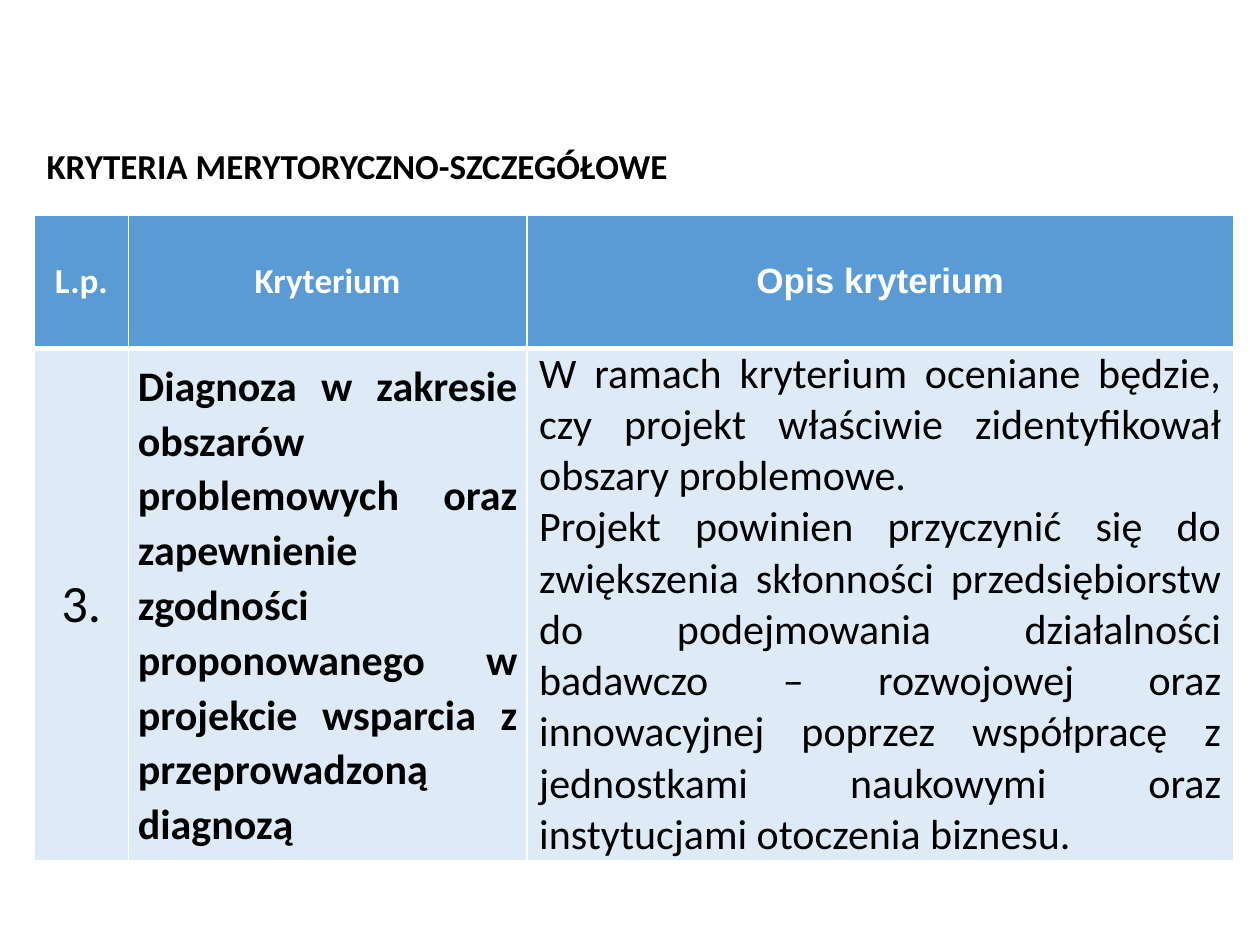
from dataclasses import dataclass

from lxml import etree
from pptx import Presentation
from pptx.dml.color import RGBColor
from pptx.enum.text import MSO_ANCHOR, MSO_AUTO_SIZE, PP_ALIGN
from pptx.oxml.ns import qn
from pptx.util import Cm, Pt

CENTER, JUSTIFY, LEFT = PP_ALIGN.CENTER, PP_ALIGN.JUSTIFY, PP_ALIGN.LEFT
TOP, MIDDLE = MSO_ANCHOR.TOP, MSO_ANCHOR.MIDDLE
WHITE, BLACK, HEADER_BLUE, BODY_BLUE = "FFFFFF", "000000", "5B9BD5", "DEEBF7"
COLUMN_WIDTHS = (1.9, 8.03, 14.25)
ROW_HEIGHTS = (2.69, 9.73)


@dataclass(frozen=True)
class CriterionCell:
    paragraphs: tuple[str, ...]
    size: int = 20
    font: str = "Calibri"
    color: str = BLACK
    bold: bool = False
    fill: str = BODY_BLUE
    align: PP_ALIGN = CENTER
    anchor: MSO_ANCHOR = MIDDLE
    side_margin: float = 0.25
    end_margin: float = 0.13
    line_spacing: float = 1.0
    bottom_border: int = 1


def header(label: str, font: str = "Calibri") -> CriterionCell:
    return CriterionCell((label,), font=font, color=WHITE, bold=True,
                         fill=HEADER_BLUE, bottom_border=3)


CRITERIA = (
    (header("L.p."), header("Kryterium"), header("Opis kryterium", "Arial")),
    (
        CriterionCell(("3.",), size=30),
        CriterionCell(
            ("Diagnoza w zakresie obszarów problemowych oraz zapewnienie zgodności "
             "proponowanego w projekcie wsparcia z przeprowadzoną diagnozą",),
            size=24, bold=True, align=JUSTIFY, side_margin=0.19, end_margin=0,
            line_spacing=1.07),
        CriterionCell(
            ("W ramach kryterium oceniane będzie, czy projekt właściwie "
             "zidentyfikował obszary problemowe.",
             "Projekt powinien przyczynić się do zwiększenia skłonności "
             "przedsiębiorstw do podejmowania działalności badawczo – rozwojowej "
             "oraz innowacyjnej poprzez współpracę z jednostkami naukowymi oraz "
             "instytucjami otoczenia biznesu."),
            size=24, align=JUSTIFY, anchor=TOP, end_margin=0),
    ),
)


def rgb(value: str) -> RGBColor:
    return RGBColor.from_string(value)


def write_paragraphs(frame, texts: tuple[str, ...], size: int, font: str,
                     color: str, bold: bool, align: PP_ALIGN,
                     line_spacing: float = 1.0) -> None:
    for index, text in enumerate(texts):
        paragraph = frame.paragraphs[0] if index == 0 else frame.add_paragraph()
        paragraph.alignment = align
        paragraph.line_spacing = line_spacing
        run = paragraph.add_run()
        run.text = text
        for name, value in {"size": Pt(size), "name": font, "bold": bold}.items():
            setattr(run.font, name, value)
        run.font.color.rgb = rgb(color)


def set_borders(cell, widths: dict[str, int]) -> None:
    """Draw white cell borders, placed before the fill as the schema requires."""
    properties = cell._tc.get_or_add_tcPr()
    for position, (side, width) in enumerate(widths.items()):
        line = etree.Element(qn(f"a:{side}"), w=str(Pt(width)))
        fill = etree.SubElement(line, qn("a:solidFill"))
        etree.SubElement(fill, qn("a:srgbClr"), val=WHITE)
        properties.insert(position, line)


def fill_cell(cell, content: CriterionCell, top_border: int) -> None:
    margins = {"margin_left": content.side_margin, "margin_right": content.side_margin,
               "margin_top": content.end_margin, "margin_bottom": content.end_margin}
    for name, value in margins.items():
        setattr(cell, name, Cm(value))
    cell.vertical_anchor = content.anchor
    cell.fill.solid()
    cell.fill.fore_color.rgb = rgb(content.fill)
    set_borders(cell, {"lnL": 1, "lnR": 1, "lnT": top_border,
                       "lnB": content.bottom_border})
    write_paragraphs(cell.text_frame, content.paragraphs, content.size, content.font,
                     content.color, content.bold, content.align, content.line_spacing)


def add_criteria_table(slide) -> None:
    table = slide.shapes.add_table(
        len(ROW_HEIGHTS), len(COLUMN_WIDTHS), Cm(0.69), Cm(4.33),
        Cm(sum(COLUMN_WIDTHS)), Cm(sum(ROW_HEIGHTS))).table
    for column, width in zip(table.columns, COLUMN_WIDTHS):
        column.width = Cm(width)
    for row, height in zip(table.rows, ROW_HEIGHTS):
        row.height = Cm(height)
    for r, contents in enumerate(CRITERIA):
        for c, content in enumerate(contents):
            top_border = CRITERIA[r - 1][c].bottom_border if r else 1
            fill_cell(table.cell(r, c), content, top_border)


def add_heading(slide) -> None:
    frame = slide.shapes.add_textbox(Cm(0.69), Cm(2.79), Cm(13.13), Cm(1.11)).text_frame
    frame.word_wrap = False
    frame.auto_size = MSO_AUTO_SIZE.SHAPE_TO_FIT_TEXT
    frame.vertical_anchor = MIDDLE
    write_paragraphs(frame, ("KRYTERIA MERYTORYCZNO-SZCZEGÓŁOWE",), 20, "Calibri",
                     BLACK, True, LEFT)


def main() -> None:
    presentation = Presentation()
    presentation.slide_width, presentation.slide_height = Cm(25.4), Cm(19.05)
    slide = presentation.slides.add_slide(presentation.slide_layouts[6])
    add_criteria_table(slide)
    add_heading(slide)
    presentation.save("out.pptx")


if __name__ == "__main__":
    main()
